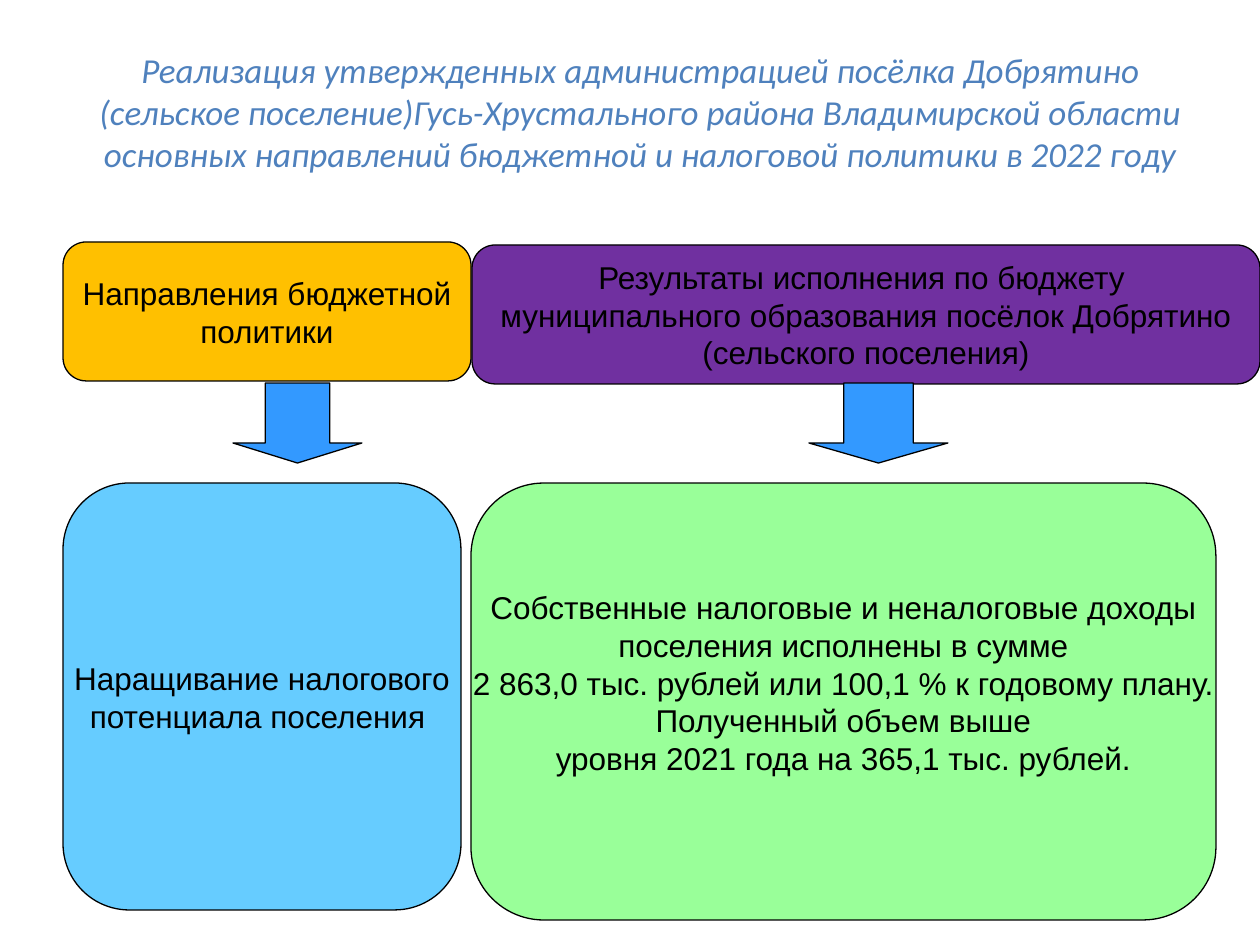
from pptx import Presentation
from pptx import util as u
from pptx.dml.color import RGBColor
from pptx.enum import shapes, text

PX = u.Inches(1) / 126
COLORS = {
    "title": "4F81BD",
    "ink": "000000",
    "policy": "FFC000",
    "results": "7030A0",
    "arrow": "3399FF",
    "goal": "66CCFF",
    "outcome": "99FF99",
}


def color(name):
    """Return the named colour."""
    return RGBColor.from_string(COLORS[name])


def emu(box):
    """Turn a box in px into EMU lengths."""
    return [u.Emu(round(length * PX)) for length in box]


def write(text_frame, lines, font_name, size, color_name, italic=None):
    """Write centred lines, one paragraph each."""
    text_frame.text = "\n".join(lines)
    for paragraph in text_frame.paragraphs:
        paragraph.alignment = text.PP_ALIGN.CENTER
        for run in paragraph.runs:
            run.font.name = font_name
            run.font.size = u.Pt(size)
            run.font.italic = italic
            run.font.color.rgb = color(color_name)


def add_title(slide, box, line):
    """Place the wrapped italic heading."""
    text_frame = slide.shapes.add_textbox(*emu(box)).text_frame
    text_frame.word_wrap = True
    write(text_frame, [line], "Calibri", 20, "title", italic=True)


def add_outlined(slide, kind, box, fill):
    """Place a filled shape with a thin black outline."""
    shape = slide.shapes.add_shape(kind, *emu(box))
    shape.shadow.inherit = False
    shape.fill.solid()
    shape.fill.fore_color.rgb = color(fill)
    shape.line.color.rgb = color("ink")
    shape.line.width = u.Pt(0.75)
    return shape


def add_card(slide, box, fill, lines, bottom=6):
    """Place a rounded card with its lines in the middle."""
    kind = shapes.MSO_SHAPE.FLOWCHART_ALTERNATE_PROCESS
    text_frame = add_outlined(slide, kind, box, fill).text_frame
    text_frame.word_wrap = False
    text_frame.vertical_anchor = text.MSO_ANCHOR.MIDDLE
    text_frame.margin_bottom = u.Emu(round(bottom * PX))
    write(text_frame, lines, "Arial", 18, "ink")


def add_arrow(slide, box):
    """Place a block arrow that points down."""
    arrow = add_outlined(slide, shapes.MSO_SHAPE.DOWN_ARROW, box, "arrow")
    arrow.adjustments[0] = 0.5
    arrow.adjustments[1] = 0.25


def add_policy_column(slide, left, top):
    """Place the policy header, its arrow and the goal."""
    add_card(slide, (left, top, 408, 139), "policy",
             ["Направления бюджетной", "политики"])
    add_arrow(slide, (left + 170, top + 141, 129, 80))
    add_card(slide, (left, top + 241, 398, 427), "goal",
             ["Наращивание налогового", "потенциала поселения "])


def add_results_column(slide, left, top):
    """Place the results header, its arrow and the outcome."""
    add_card(slide, (left + 1, top + 3, 788, 139), "results", [
        "Результаты исполнения по бюджету ",
        "муниципального образования посёлок Добрятино",
        "(сельского поселения)",
    ])
    add_arrow(slide, (left + 338, top + 141, 139, 80))
    add_card(slide, (left, top + 241, 745, 437), "outcome", [
        "Собственные налоговые и неналоговые доходы",
        "поселения исполнены в сумме",
        "2 863,0 тыс. рублей или 100,1 % к годовому плану.",
        "Полученный объем выше",
        "уровня 2021 года на 365,1 тыс. рублей.",
    ], bottom=44)


def main():
    """Build and save the slide."""
    presentation = Presentation()
    presentation.slide_width, presentation.slide_height = emu((1260, 945))
    slide = presentation.slides.add_slide(presentation.slide_layouts[6])
    add_policy_column(slide, 63, 242)
    add_results_column(slide, 471, 242)
    add_title(
        slide, (63, 42, 1155, 140),
        "Реализация утвержденных администрацией посёлка Добрятино "
        "(сельское поселение)Гусь-Хрустального района Владимирской области "
        "основных направлений бюджетной и налоговой политики в 2022 году")
    presentation.save("out.pptx")


if __name__ == "__main__":
    main()
